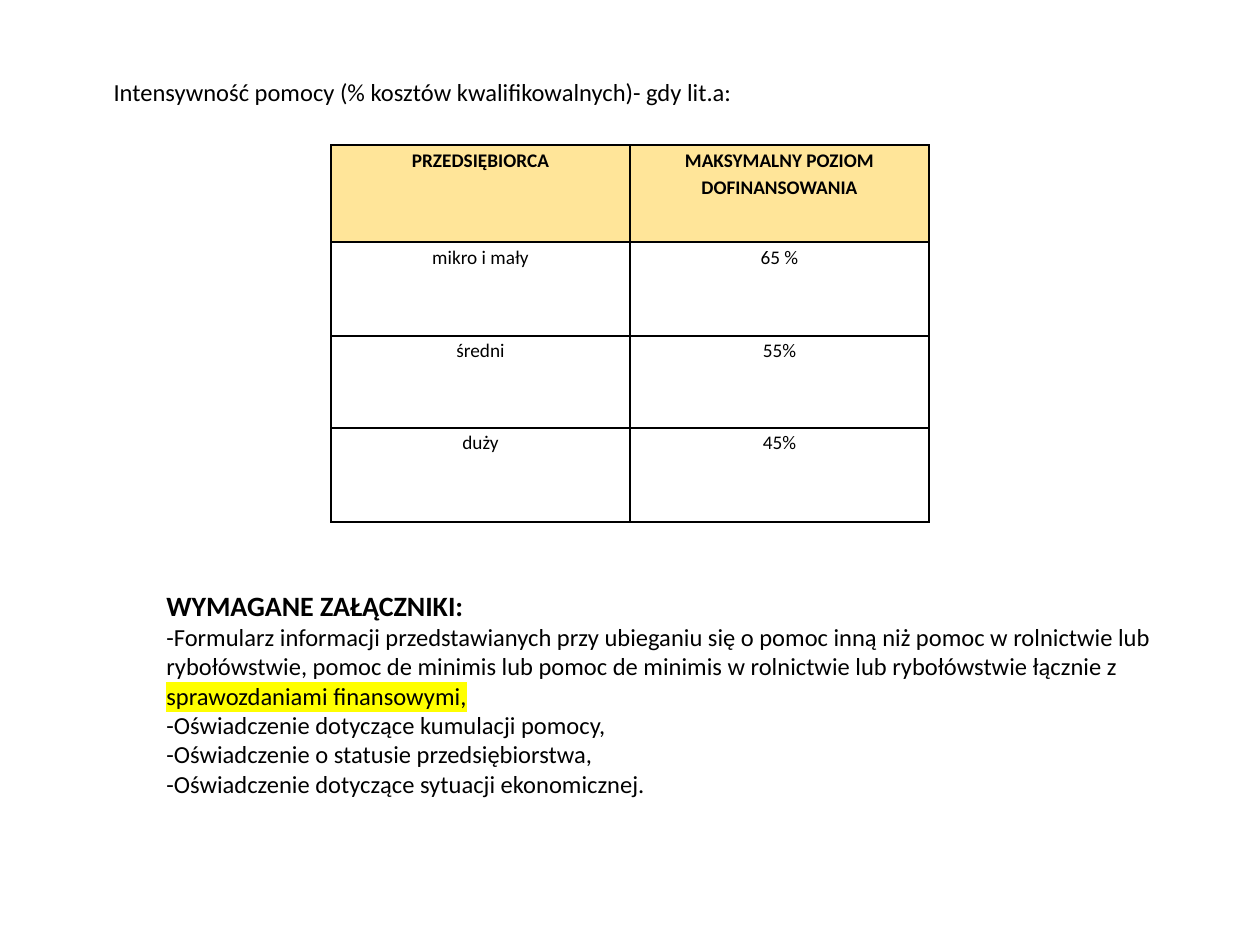
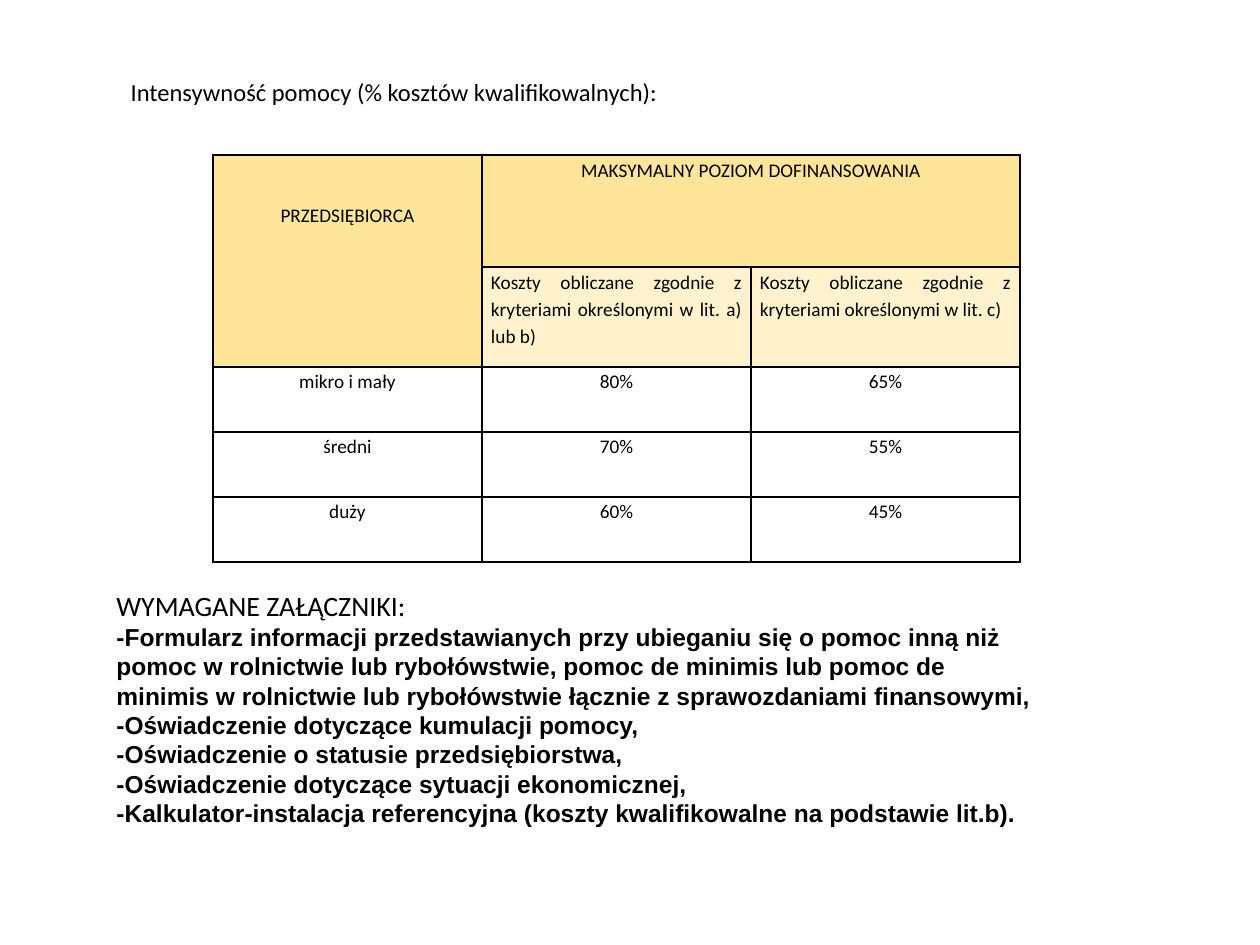
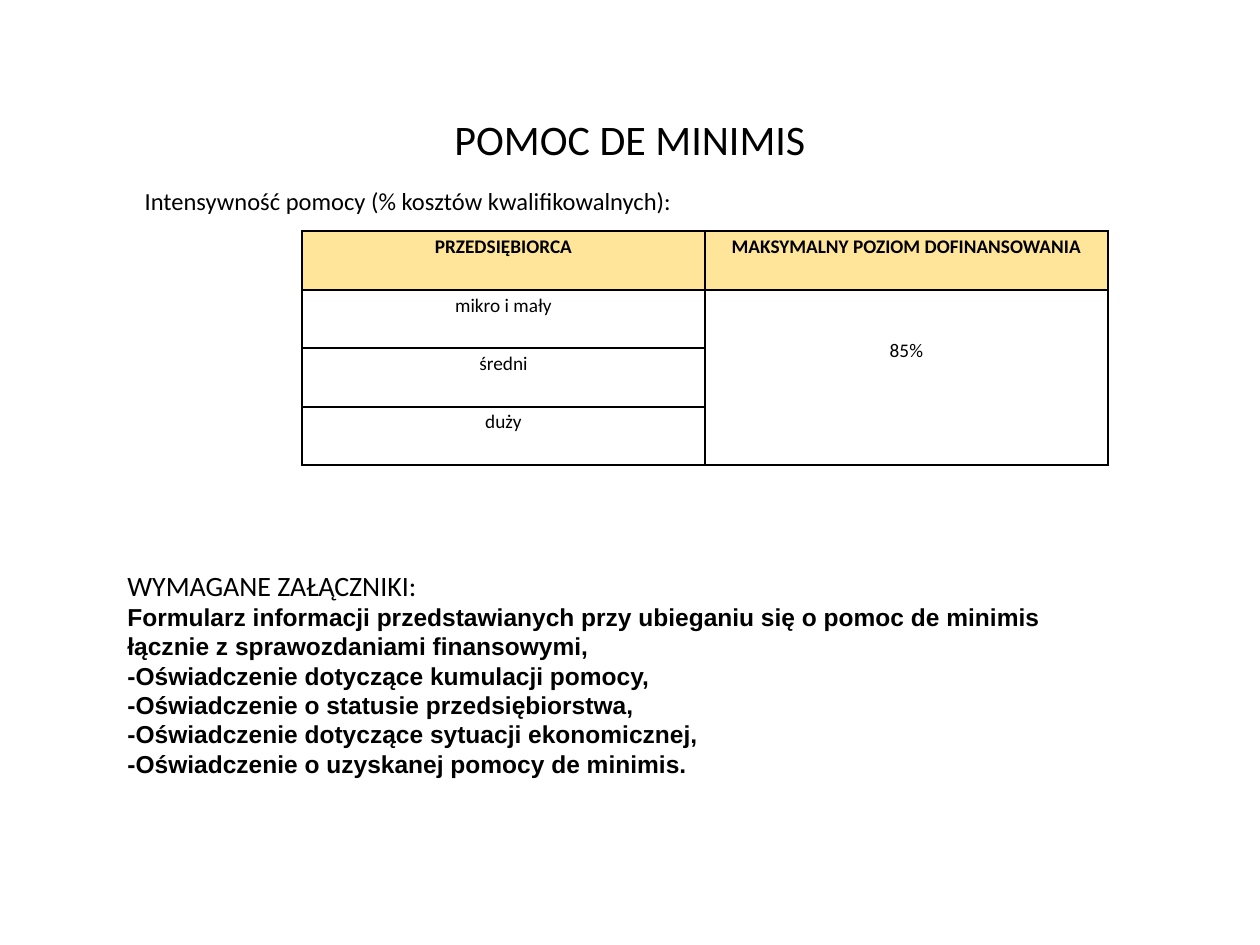
import pptx
import pptx.dml.color
import pptx.enum.text
import pptx.oxml
import pptx.util
from pptx.oxml.ns import qn

PX = 914400 / 126
COLORS = {"ink": "000000", "header": "FFE599", "subheader": "FFF2CC", "marker": "FFFF00"}
ALIGN = pptx.enum.text.PP_ALIGN
INTENSITY = "Intensywność pomocy (% kosztów kwalifikowalnych)"
COMPANY = "PRZEDSIĘBIORCA"
MAXIMUM = "MAKSYMALNY POZIOM DOFINANSOWANIA"
COMPANY_SIZES = ["mikro i mały", "średni", "duży"]
FORM = "Formularz informacji przedstawianych przy ubieganiu się o pomoc "
REPORTS = "sprawozdaniami finansowymi"
AID_FORM = (
    f"-{FORM}inną niż pomoc w rolnictwie lub rybołówstwie, pomoc de minimis "
    f"lub pomoc de minimis w rolnictwie lub rybołówstwie łącznie z {REPORTS}"
)
STATEMENTS = [
    "-Oświadczenie dotyczące kumulacji pomocy",
    "-Oświadczenie o statusie przedsiębiorstwa",
    "-Oświadczenie dotyczące sytuacji ekonomicznej",
]


def px(length):
    return pptx.util.Emu(round(length * PX))


class Deck:
    def __init__(self):
        self.presentation = pptx.Presentation()
        self.presentation.slide_width = px(1260)
        self.presentation.slide_height = px(945)
        self.slide = None

    def new_slide(self):
        self.slide = self.presentation.slides.add_slide(self.presentation.slide_layouts[6])

    def style(self, paragraph, size, font="Calibri", bold=False):
        for run in paragraph.runs:
            run.font.size = pptx.util.Pt(size)
            run.font.name = font
            run.font.bold = bold
            run.font.color.rgb = pptx.dml.color.RGBColor.from_string(COLORS["ink"])

    def highlight(self, run):
        mark = pptx.oxml.parse_xml(
            '<a:highlight xmlns:a="http://schemas.openxmlformats.org/drawingml/2006/main">'
            f'<a:srgbClr val="{COLORS["marker"]}"/></a:highlight>'
        )
        run.font._element.find(qn("a:solidFill")).addnext(mark)

    def text_box(self, left, top, width, height):
        frame = self.slide.shapes.add_textbox(px(left), px(top), px(width), px(height)).text_frame
        frame.word_wrap = True
        return frame

    def title(self, text):
        frame = self.text_box(87, 50, 1086, 183)
        frame.text = text
        frame.vertical_anchor = pptx.enum.text.MSO_ANCHOR.MIDDLE
        heading = frame.paragraphs[0]
        heading.alignment = ALIGN.CENTER
        heading.line_spacing = 0.9
        self.style(heading, 24)

    def intensity(self, text, left, top, width, height, indent=14):
        frame = self.text_box(left, top, width, height)
        frame.margin_left += px(indent)
        frame.text = text
        caption = frame.paragraphs[0]
        caption.alignment = ALIGN.JUSTIFY
        caption.line_spacing = 1.15
        self.style(caption, 14)

    def attachments(self, items, left, top, width, height,
                    heading_bold=False, font="Arial", bold=True, marked=None):
        frame = self.text_box(left, top, width, height)
        frame.text = "WYMAGANE ZAŁĄCZNIKI:"
        self.style(frame.paragraphs[0], 16, bold=heading_bold)
        for item in [f"{entry}," for entry in items[:-1]] + [f"{items[-1]}."]:
            paragraph = frame.add_paragraph()
            is_marked = marked is not None and item.endswith(marked)
            pieces = [item.removesuffix(marked), marked] if is_marked else [item]
            for piece in pieces:
                paragraph.add_run().text = piece
            self.style(paragraph, 14, font, bold)
            if is_marked:
                self.highlight(paragraph.runs[-1])

    def cell(self, cell, text, fill=None, bold=False, align=ALIGN.CENTER, drop=0):
        cell.margin_left = cell.margin_right = px(9)
        cell.margin_top = px(drop)
        cell.margin_bottom = 0
        properties = cell._tc.get_or_add_tcPr()
        for side in ("lnL", "lnR", "lnT", "lnB"):
            properties.append(pptx.oxml.parse_xml(
                f'<a:{side} xmlns:a="http://schemas.openxmlformats.org/drawingml/2006/main" w="12700">'
                f'<a:solidFill><a:srgbClr val="{COLORS["ink"]}"/></a:solidFill></a:{side}>'
            ))
        if fill:
            cell.fill.solid()
            cell.fill.fore_color.rgb = pptx.dml.color.RGBColor.from_string(COLORS[fill])
        else:
            cell.fill.background()
        if text:
            cell.text_frame.text = text
            paragraph = cell.text_frame.paragraphs[0]
            paragraph.alignment = align
            paragraph.line_spacing = 1.15
            paragraph.space_after = pptx.util.Pt(10)
            self.style(paragraph, 11, bold=bold)

    def table(self, rows, left, top, column_width, row_heights,
              header_bold=True, merges=(), looks=None):
        columns = len(rows[0])
        table = self.slide.shapes.add_table(
            len(rows), columns, px(left), px(top),
            px(column_width * columns), px(sum(row_heights)),
        ).table
        table.first_row = table.horz_banding = False
        for column in table.columns:
            column.width = px(column_width)
        for row, height in zip(table.rows, row_heights):
            row.height = px(height)
        for r, row in enumerate(rows):
            for c, text in enumerate(row):
                look = {"fill": "header", "bold": header_bold} if r == 0 else {}
                look.update((looks or {}).get((r, c), {}))
                self.cell(table.cell(r, c), text, **look)
        for first, last in merges:
            table.cell(*first).merge(table.cell(*last))


def main():
    deck = Deck()

    deck.new_slide()
    deck.intensity(f"{INTENSITY}- gdy lit.a:", 87, 66, 1086, 785)
    deck.table(
        [[COMPANY, MAXIMUM], *zip(COMPANY_SIZES, ["65 %", "55%", "45%"])],
        331, 145, 299, [97, 94, 92, 94],
    )
    deck.attachments([AID_FORM, *STATEMENTS], 154, 582, 1032, 255,
                     heading_bold=True, font="Calibri", bold=False, marked=f"{REPORTS},")

    deck.new_slide()
    criteria = "Koszty obliczane zgodnie z kryteriami określonymi w lit. "
    criteria_look = {"fill": "subheader", "align": ALIGN.JUSTIFY}
    deck.table(
        [
            [COMPANY, MAXIMUM, None],
            [None, f"{criteria}a) lub b)", f"{criteria}c)"],
            *zip(COMPANY_SIZES, ["80%", "70%", "60%"], ["65%", "55%", "45%"]),
        ],
        213, 155, 269, [112, 100, 65, 65, 65],
        header_bold=False,
        merges=[((0, 0), (1, 0)), ((0, 1), (0, 2))],
        looks={(0, 0): {"drop": 45}, (1, 0): {"fill": "header"},
               (1, 1): criteria_look, (1, 2): criteria_look},
    )
    deck.intensity(f"{INTENSITY}:", 104, 66, 576, 45)
    deck.attachments(
        [AID_FORM, *STATEMENTS,
         "-Kalkulator-instalacja referencyjna (koszty kwalifikowalne na podstawie lit.b)"],
        104, 582, 953, 255,
    )

    deck.new_slide()
    deck.title("POMOC DE MINIMIS")
    deck.table(
        [[COMPANY, MAXIMUM], *zip(COMPANY_SIZES, ["85%", None, None])],
        302, 231, 403, [59, 58, 59, 58],
        merges=[((1, 1), (3, 1))],
        looks={(1, 1): {"drop": 45}},
    )
    deck.intensity(f"{INTENSITY}:", 107, 175, 596, 45, indent=25)
    deck.attachments(
        [f"{FORM}de minimis łącznie z {REPORTS}", *STATEMENTS,
         "-Oświadczenie o uzyskanej pomocy de minimis"],
        115, 562, 990, 224,
    )

    deck.presentation.save("out.pptx")


if __name__ == "__main__":
    main()
